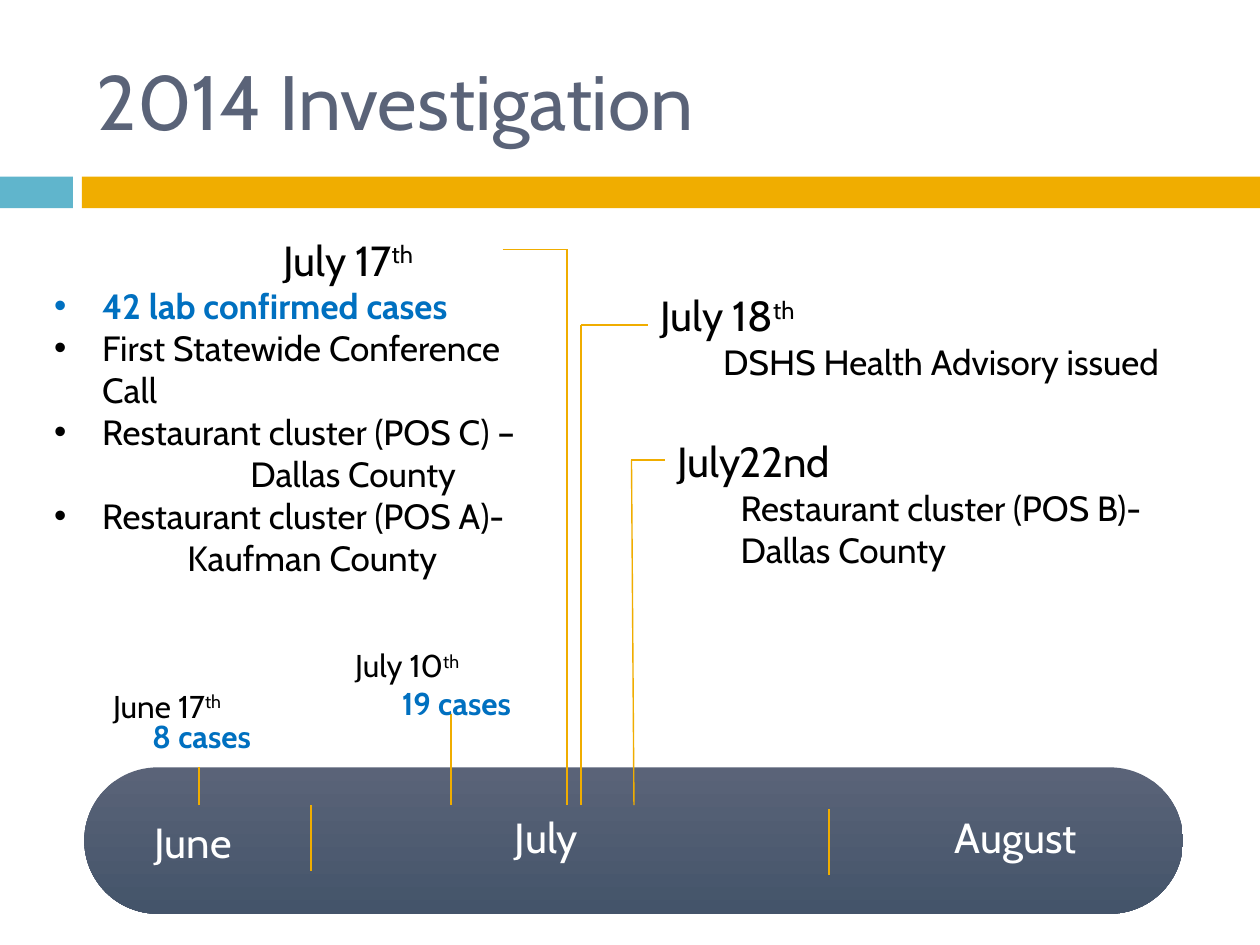
import pptx
import pptx.dml.color
import pptx.enum.shapes
import pptx.enum.text
import pptx.oxml
import pptx.oxml.ns
import pptx.util

Cm = pptx.util.Cm
Pt = pptx.util.Pt
RGBColor = pptx.dml.color.RGBColor
SHAPE = pptx.enum.shapes.MSO_SHAPE
ANCHOR = pptx.enum.text.MSO_ANCHOR

GOLD = RGBColor(0xF0, 0xAD, 0x00)
TEAL = RGBColor(0x60, 0xB5, 0xCC)
SLATE = RGBColor(0x5A, 0x63, 0x78)
NAVY = RGBColor(0x44, 0x54, 0x6A)
BLUE = RGBColor(0x00, 0x70, 0xC0)
BLACK = RGBColor(0, 0, 0)
WHITE = RGBColor(0xFF, 0xFF, 0xFF)

FACE = "Cabin"
STYLES = {
    "title": (SLATE, {"size": Pt(44), "name": FACE}),
    "month": (WHITE, {"size": Pt(24), "name": FACE}),
    "date": (BLACK, {"size": Pt(24), "name": FACE}),
    "note": (BLACK, {"size": Pt(20), "name": FACE}),
    "key": (BLUE, {"size": Pt(20), "name": FACE, "bold": True}),
    "day": (BLACK, {"size": Pt(18), "name": FACE}),
    "count": (BLUE, {"size": Pt(18), "name": FACE, "bold": True}),
}
BULLET = (2.24, -0.97)

# box, paragraphs (text, style, left margin and hang), line points within the box
EVENTS = [
    ((-0.43, 4.6, 11.84, 6.4),
     [("July 17^th", "date", (5.89, 0)),
      ("42 lab confirmed cases", "key", BULLET),
      ("First Statewide Conference Call", "note", BULLET),
      ("Restaurant cluster (POS C) –", "note", BULLET),
      ("Dallas County", "note", (5.23, 0)),
      ("Restaurant cluster (POS A)-", "note", BULLET),
      ("Kaufman County", "note", (3.96, 0))],
     [(10.56, 0.43), (11.86, 0.43), (11.86, 11.63)]),
    ((13.06, 5.72, 12.7, 2.13),
     [("July 18^th", "date", (0, 0)),
      ("DSHS Health Advisory issued", "note", (1.27, 0))],
     [(-1.35, 10.51), (-1.35, 0.83), (0, 0.83)]),
    ((13.41, 8.66, 10.72, 3),
     [("July22nd", "date", (0, 0)),
      ("Restaurant cluster (POS B)-", "note", (1.27, 0)),
      ("Dallas County", "note", (1.27, 0))],
     [(-0.63, 7.57), (-0.68, 0.61), (0, 0.61)]),
]

# box of the day, day, count, offset of the count, line points within the box
MARKS = [
    ((2.03, 13.72, 3.43, 1.02), "June 17^th", "8 cases", (0.79, 0.61),
     [(1.98, 1.75), (1.98, 2.51)]),
    ((6.91, 12.9, 2.69, 1.02), "July 10^th", "19 cases", (0.94, 0.77),
     [(2.18, 1.5), (2.18, 3.33)]),
]


def add_run(para, text, style, raised=False):
    run = para.add_run()
    run.text = text
    color, form = STYLES[style]
    for key, value in form.items():
        setattr(run.font, key, value)
    run.font.color.rgb = color
    if raised:
        run.font._element.set("baseline", "30000")


def indent(para, left, hang):
    """Set the left margin; a hanging indent also brings a bullet."""
    props = para._p.get_or_add_pPr()
    props.set("marL", str(Cm(left)))
    props.set("indent", str(Cm(hang)))
    if hang:
        for tag, attr, value in (("buFont", "typeface", "Arial"),
                                 ("buChar", "char", "•")):
            item = pptx.oxml.ns.qn("a:" + tag)
            props.makeelement(item)
            props.append(props.makeelement(item, {attr: value}))


def add_text(slide, box, paras, wrap=True, anchor=ANCHOR.TOP):
    """Write paragraphs; what follows a ^ is raised."""
    frame = slide.shapes.add_textbox(*map(Cm, box)).text_frame
    for key, value in {"word_wrap": wrap, "vertical_anchor": anchor}.items():
        setattr(frame, key, value)
    for num, (text, style, inset) in enumerate(paras):
        para = frame.add_paragraph() if num else frame.paragraphs[0]
        indent(para, *inset)
        base, _, top = text.partition("^")
        add_run(para, base, style)
        if top:
            add_run(para, top, style, raised=True)


def add_path(slide, box, points):
    """Join points, given from the box corner, with straight lines."""
    spots = [(Cm(box[0] + x), Cm(box[1] + y)) for x, y in points]
    for start, end in zip(spots, spots[1:]):
        line = slide.shapes.add_connector(
            pptx.enum.shapes.MSO_CONNECTOR.STRAIGHT, *start, *end)
        line.line.color.rgb = GOLD
        line.line.width = Pt(0.79)
        line._element.spPr.append(pptx.oxml.parse_xml(
            "<a:effectLst %s/>" % pptx.oxml.ns.nsdecls("a")))


def add_block(slide, kind, box):
    block = slide.shapes.add_shape(kind, *map(Cm, box))
    block.shadow.inherit = False
    block.line.fill.background()
    return block


def add_head(slide, box):
    left, top, width, height = box
    bar, tall = top + 2.92, 0.64
    for x, wide, color in ((0, 1.47, TEAL), (1.65, 23.75, GOLD)):
        block = add_block(slide, SHAPE.RECTANGLE, (x, bar, wide, tall))
        block.fill.solid()
        block.fill.fore_color.rgb = color
    add_text(slide, box, [("2014 Investigation", "title", (0, 0))],
             anchor=ANCHOR.MIDDLE)


def add_band(slide, box):
    """Draw the band of months with its dividers."""
    left, top = box[:2]
    band = add_block(slide, SHAPE.ROUNDED_RECTANGLE, box)
    band.adjustments[0] = 0.5
    band.fill.gradient()
    band.fill.gradient_angle = 270
    for stop, place, color in zip(band.fill.gradient_stops, (0, 1), (SLATE, NAVY)):
        stop.position = place
        stop.color.rgb = color
    for name, x, y, wide in (("June", 1.17, 0.86, 3.38),
                             ("July", 8.43, 0.76, 5.08),
                             ("August", 17.3, 0.76, 5.28)):
        add_text(slide, (left + x, top + y, wide, 1.27), [(name, "month", (0, 0))])
    for x, y in ((4.57, 0.76), (15.01, 0.84)):
        add_path(slide, box, [(x, y), (x, y + 1.33)])


def add_event(slide, box, paras, points):
    add_text(slide, box, paras)
    add_path(slide, box, points)


def add_mark(slide, box, day, count, shift, points):
    add_path(slide, box, points)
    spot = (box[0] + shift[0], box[1] + shift[1], 2.95, 1.8)
    add_text(slide, spot, [(count, "count", (0, 0))])
    add_text(slide, box, [(day, "day", (0, 0))], wrap=False)


def main():
    deck = pptx.Presentation()
    deck.slide_width, deck.slide_height = Cm(25.4), Cm(19.05)
    slide = deck.slides.add_slide(deck.slide_layouts[6])
    add_head(slide, (1.7, 0.64, 22.66, 2.74))
    add_band(slide, (1.7, 15.47, 22.15, 2.95))
    for event in EVENTS:
        add_event(slide, *event)
    for mark in MARKS:
        add_mark(slide, *mark)
    deck.save("out.pptx")


if __name__ == "__main__":
    main()
